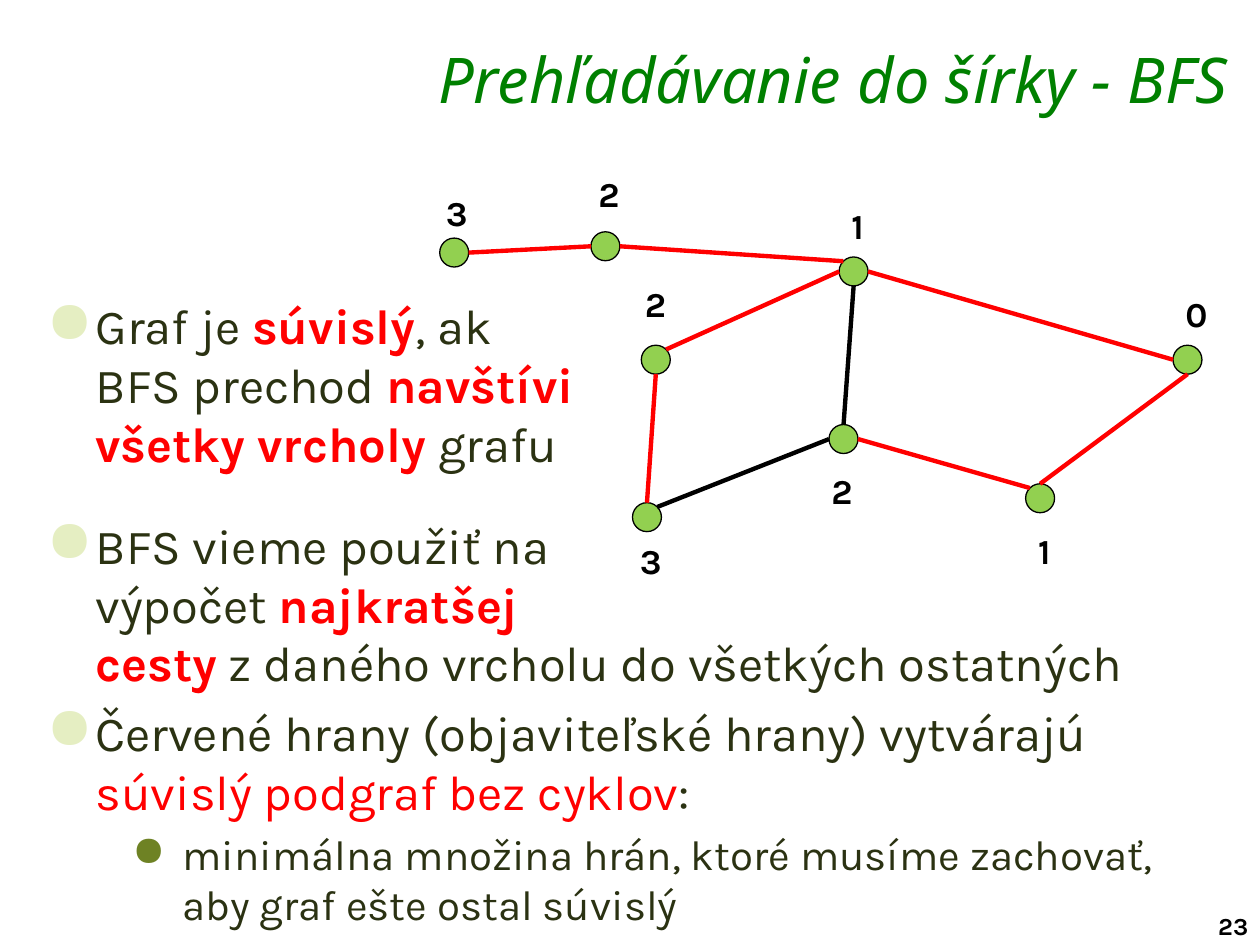
import math
import pptx
import pptx.util
import pptx.dml.color
import pptx.enum.shapes
import pptx.enum.text
import pptx.oxml
import pptx.oxml.ns
from lxml import etree

HUES = {"title": "008000", "text": "2B3212", "red": "FF0000", "black": "000000",
        "node": "92D050", "pale": "E5EEC2", "olive": "6E8224"}
WIDE, HIGH = 10, 7.5
SIZE = 0.23
SITES = {"right": 0, "low": 90, "left": 180, "upleft": 225, "top": 270, "upright": 315}
NODES = {
    "a": (0.8, 17.01, "3", 0, 4.48),
    "b": (20, 15.52, "2", 19.36, 0),
    "c": (51.52, 21.49, "1", 51.52, 7.46),
    "d": (26.4, 42.39, "2", 25.28, 25.97),
    "e": (93.92, 42.39, "0", 93.92, 28.36),
    "f": (50.24, 61.19, "2", 48.96, 70.45),
    "g": (25.28, 79.7, "3", 24.64, 86.87),
    "h": (75.2, 75.22, "1", 75.2, 84.48),
}
EDGES = [
    ("a", "right", "b", "left", "red"),
    ("b", "right", "c", "upleft", "red"),
    ("d", "upright", "c", "left", "red"),
    ("c", "right", "e", "left", "red"),
    ("f", "top", "c", "low", "black"),
    ("h", "top", "e", "low", "red"),
    ("f", "right", "h", "upleft", "red"),
    ("g", "top", "d", "low", "red"),
    ("g", "upright", "f", "left", "black"),
]
MAIN = {"left": 0.39, "hang": 0.39, "level": 0, "hue": "pale", "share": 120, "size": 28}
SUB = {"left": 1.08, "hang": 0.4, "level": 1, "hue": "olive", "share": 100, "size": 24}
ITEMS = [
    (MAIN, 0, [("Graf je ", "text", False), ("súvislý", "red", True),
               (", ak \nBFS prechod ", "text", False),
               ("navštívi\nvšetky vrcholy ", "red", True), ("grafu", "text", False)]),
    (MAIN, 24.5, [("BFS vieme použiť na \nvýpočet ", "text", False),
                  ("najkratšej \ncesty", "red", True),
                  (" z daného vrcholu do všetkých ostatných", "text", False)]),
    (MAIN, 6, [("Červené hrany (objaviteľské hrany) vytvárajú ", "text", False),
               ("súvislý podgraf bez cyklov", "red", False), (":", "text", False)]),
    (SUB, 4.8, [("minimálna množina hrán, ktoré musíme zachovať, "
                 "aby graf ešte ostal súvislý", "text", False)]),
]


def inch(*nums):
    return [pptx.util.Inches(n) for n in nums]


def hue(name):
    return pptx.dml.color.RGBColor.from_string(HUES[name])


def style(font, name, size, tint, **flags):
    for key, val in {"name": name, "size": pptx.util.Pt(size), **flags}.items():
        setattr(font, key, val)
    font.color.rgb = hue(tint)


def spot(box, x, y):
    left, top, wide, high = box
    return left + wide * x / 100, top + high * y / 100


def title(slide, box):
    head = slide.shapes.title
    for key, val in zip(("left", "top", "width", "height"), inch(*box)):
        setattr(head, key, val)
    frame = head.text_frame
    form = {"word_wrap": True, "margin_top": pptx.util.Inches(0.01),
            "vertical_anchor": pptx.enum.text.MSO_ANCHOR.TOP,
            "auto_size": pptx.enum.text.MSO_AUTO_SIZE.NONE}
    for key, val in form.items():
        setattr(frame, key, val)
    para = frame.paragraphs[0]
    para.alignment = pptx.enum.text.PP_ALIGN.RIGHT
    run = para.add_run()
    run.text = "Prehľadávanie do šírky - BFS"
    style(run.font, "Noto Sans", 36, "title", italic=True, bold=False)


def label(slide, box, text, size):
    frame = slide.shapes.add_textbox(*inch(*box)).text_frame
    frame.word_wrap = False
    run = frame.paragraphs[0].add_run()
    run.text = text
    style(run.font, "Karla", size, "black", bold=True)


def bullet(para, form):
    props = para._p.get_or_add_pPr()
    props.set("marL", str(pptx.util.Inches(form["left"])))
    props.set("indent", str(-pptx.util.Inches(form["hang"])))
    tag = pptx.oxml.ns.qn
    tint = etree.SubElement(props, tag("a:buClr"))
    etree.SubElement(tint, tag("a:srgbClr"), val=HUES[form["hue"]])
    etree.SubElement(props, tag("a:buSzPct"), val=str(form["share"] * 1000))
    etree.SubElement(props, tag("a:buChar"), char="●")


def body(slide, box):
    frame = slide.shapes.add_textbox(*inch(*box)).text_frame
    frame.word_wrap = True
    for num, (form, gap, parts) in enumerate(ITEMS):
        para = frame.add_paragraph() if num else frame.paragraphs[0]
        para.level = form["level"]
        bullet(para, form)
        para.space_before = pptx.util.Pt(gap)
        style(para.font, "Karla", form["size"], "text")
        for text, tint, bold in parts:
            for row, piece in enumerate(text.split("\n")):
                if row:
                    para.add_line_break()
                run = para.add_run()
                run.text = piece
                style(run.font, "Karla", form["size"], tint, bold=bold)


def port(box, name, site):
    x, y = spot(box, *NODES[name][:2])
    turn = math.radians(SITES[site])
    half = SIZE / 2
    return x + half * (1 + math.cos(turn)), y + half * (1 + math.sin(turn))


def graph(slide, box):
    for x, y, text, left, top in NODES.values():
        dot = slide.shapes.add_shape(pptx.enum.shapes.MSO_SHAPE.OVAL,
                                     *inch(*spot(box, x, y), SIZE, SIZE))
        dot.shadow.inherit = False
        dot.fill.solid()
        dot.fill.fore_color.rgb = hue("node")
        dot.line.color.rgb = hue("black")
        dot.line.width = pptx.util.Pt(0.75)
        label(slide, (*spot(box, left, top), 0.37, 0.44), text, 20)
    for start, out, end, into, tint in EDGES:
        edge = slide.shapes.add_connector(
            pptx.enum.shapes.MSO_CONNECTOR.STRAIGHT,
            *inch(*port(box, start, out), *port(box, end, into)))
        edge.line.color.rgb = hue(tint)
        edge.line.width = pptx.util.Pt(2.5)
        etree.SubElement(edge._element.spPr, pptx.oxml.ns.qn("a:effectLst"))


def main():
    deck = pptx.Presentation()
    deck.slide_width, deck.slide_height = inch(WIDE, HIGH)
    slide = deck.slides.add_slide(deck.slide_layouts[5])
    title(slide, (2.29, 0.31, 7.55, 0.58))
    body(slide, (0.27, 2.3, 9.38, 5.14))
    graph(slide, (3.44, 1.32, 6.25, 3.35))
    label(slide, (9.57, 7.18, 0.51, 0.33), "23", 14)
    deck.save("out.pptx")


if __name__ == "__main__":
    main()
